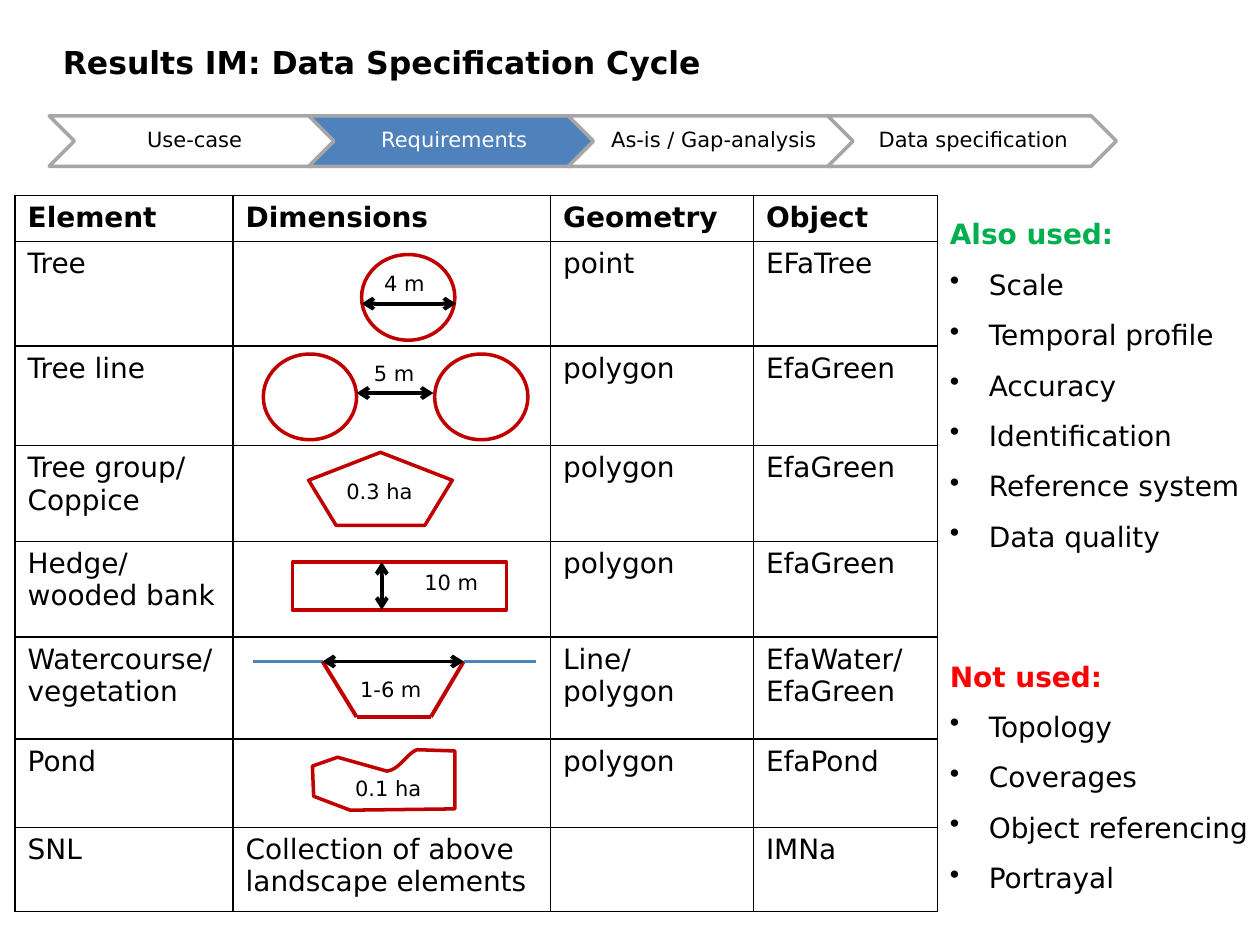
from itertools import accumulate
from lxml.etree import SubElement
from pptx import Presentation
from pptx.dml.color import RGBColor
from pptx.enum.shapes import MSO_CONNECTOR, MSO_SHAPE
from pptx.enum.text import MSO_ANCHOR, MSO_AUTO_SIZE, PP_ALIGN
from pptx.oxml.ns import qn
from pptx.util import Inches, Pt

COLS, ROWS = 100, 75
UNIT = Inches(0.1)
BLACK, WHITE, GREY = "000000", "FFFFFF", "A6A6A6"
RED, BLUE = "C00000", "4F81BD"

STEPS = ["Use-case", "Requirements", "As-is / Gap-analysis", "Data specification"]
WIDTHS = [17.3, 25.2, 16.1, 14.6]
HEIGHTS = [3.5, 8.3, 7.9, 7.6, 7.6, 8.1, 7, 6.7]
CELLS = [
    ["Element", "Dimensions", "Geometry", "Object"],
    ["Tree", "", "point", "EFaTree"],
    ["Tree line", "", "polygon", "EfaGreen"],
    ["Tree group/\nCoppice", "", "polygon", "EfaGreen"],
    ["Hedge/\nwooded bank", "", "polygon", "EfaGreen"],
    ["Watercourse/\nvegetation", "", "Line/\npolygon", "EfaWater/\nEfaGreen"],
    ["Pond", "", "polygon", "EfaPond"],
    ["SNL", "Collection of above landscape elements", "", "IMNa"],
]
USED = ["Scale", "Temporal profile", "Accuracy", "Identification",
        "Reference system", "Data quality"]
UNUSED = ["Topology", "Coverages", "Object referencing", "Portrayal"]


def grid(*vals):
    return [round(val * UNIT) for val in vals]


def tint(code):
    return RGBColor.from_string(code)


def style(par, size, color=BLACK, bold=False):
    font = par.font
    font.name, font.size, font.bold = "DejaVu Sans", Pt(size), bold
    font.color.rgb = tint(color)


def paint(shape, fill, line, width=2):
    shape.shadow.inherit = False
    shape.fill.solid()
    shape.fill.fore_color.rgb = tint(fill)
    shape.line.color.rgb = tint(line)
    shape.line.width = Pt(width)


def block(shapes, kind, box, fill=WHITE, line=RED):
    shape = shapes.add_shape(kind, *grid(*box))
    paint(shape, fill, line)


def label(shapes, box, text, size=12, bold=False, wrap=False):
    frame = shapes.add_textbox(*grid(*box)).text_frame
    frame.word_wrap = wrap
    frame.auto_size = MSO_AUTO_SIZE.SHAPE_TO_FIT_TEXT
    frame.text = text
    style(frame.paragraphs[0], size, bold=bold)


def stroke(shapes, start, end, color=BLACK, heads=False):
    line = shapes.add_connector(MSO_CONNECTOR.STRAIGHT, *grid(*start, *end))
    line.line.color.rgb = tint(color)
    line.line.width = Pt(2.25)
    if heads:
        for tag in ("a:headEnd", "a:tailEnd"):
            SubElement(line.line._get_or_add_ln(), qn(tag), type="arrow")
    SubElement(line._element.spPr, qn("a:effectLst"))


def chain(shapes, box):
    left, top, wide, high = box
    step = (wide - 22.9) / (len(STEPS) - 1)
    for num, text in enumerate(STEPS):
        live = text == "Requirements"
        x = left + num * step
        group = shapes.add_group_shape().shapes
        block(group, MSO_SHAPE.CHEVRON, (x, top, 22.9, high), BLUE if live else WHITE, GREY)
        frame = group.add_textbox(*grid(x + 2, top, 18.8, high)).text_frame
        frame.word_wrap = True
        frame.vertical_anchor = MSO_ANCHOR.MIDDLE
        frame.margin_left = Inches(0.05)
        frame.margin_top = frame.margin_right = frame.margin_bottom = Inches(0.02)
        frame.text = text
        par = frame.paragraphs[0]
        par.alignment, par.line_spacing = PP_ALIGN.CENTER, 0.9
        style(par, 12, WHITE if live else BLACK)


def edge(cell):
    props = cell._tc.get_or_add_tcPr()
    for num, side in enumerate(("lnL", "lnR", "lnT", "lnB")):
        line = props.makeelement(qn("a:" + side), {"w": str(Pt(1))})
        fill = SubElement(line, qn("a:solidFill"))
        SubElement(fill, qn("a:srgbClr"), val=BLACK)
        props.insert(num, line)


def table(shapes, box):
    grid_box = grid(*box)
    tab = shapes.add_table(len(HEIGHTS), len(WIDTHS), *grid_box).table
    tab.first_row = tab.horz_banding = False
    for col, wide in zip(tab.columns, grid(*WIDTHS)):
        col.width = wide
    for row, high, texts in zip(tab.rows, grid(*HEIGHTS), CELLS):
        row.height = high
        for cell, text in zip(row.cells, texts):
            cell.fill.solid()
            cell.fill.fore_color.rgb = tint(WHITE)
            edge(cell)
            cell.text = text
            for par in cell.text_frame.paragraphs:
                style(par, 16, bold=texts is CELLS[0])


def tree(shapes, x, y):
    block(shapes, MSO_SHAPE.OVAL, (x + 10.2, y + 1.2, 7.4, 6.8))
    stroke(shapes, (x + 10.2, y + 5.1), (x + 17.7, y + 5.1), heads=True)
    label(shapes, (x + 11, y + 2, 5.3, 3), "4 m")


def avenue(shapes, x, y):
    for shift in (2.4, 16):
        block(shapes, MSO_SHAPE.OVAL, (x + shift, y + 0.8, 7.4, 6.8))
    stroke(shapes, (x + 9.8, y + 3.9), (x + 15.9, y + 3.9), heads=True)
    label(shapes, (x + 10.2, y + 0.8, 5.3, 3), "5 m")


def coppice(shapes, x, y):
    block(shapes, MSO_SHAPE.REGULAR_PENTAGON, (x + 6, y + 0.7, 11.4, 5.8))
    label(shapes, (x + 8, y + 2.3, 7.5, 3), "0.3 ha")


def hedge(shapes, x, y):
    block(shapes, MSO_SHAPE.RECTANGLE, (x + 4.7, y + 1.8, 17, 3.8))
    stroke(shapes, (x + 11.8, y + 1.8), (x + 11.8, y + 5.6), heads=True)
    label(shapes, (x + 14.2, y + 1.9, 6.4, 3), "10 m")


def water(shapes, x, y):
    spots = [(1.6, 2.1), (7.1, 2.1), (9.8, 6.5), (15.7, 6.5), (18.3, 2.1), (24, 2.1)]
    spots = [(x + a, y + b) for a, b in spots]
    for start, end, color in zip(spots, spots[1:], [BLUE, RED, RED, RED, BLUE]):
        stroke(shapes, start, end, color)
    stroke(shapes, spots[1], spots[4], heads=True)
    label(shapes, (x + 9.1, y + 2.8, 7.2, 3), "1-6 m", wrap=True)


def curve(knots, count=12):
    for num in range(1, count + 1):
        t = num / count
        parts = ((1 - t) ** 3, 3 * t * (1 - t) ** 2, 3 * t * t * (1 - t), t ** 3)
        yield tuple(sum(p * k[axis] for p, k in zip(parts, knots)) for axis in (0, 1))


def pond(shapes, x, y):
    spots = [(8.3, 1.6), (6.3, 2.3), (6.4, 4.7), (9.3, 5.8), (17.6, 5.7), (17.6, 1.1), (14.6, 1)]
    spots += curve([spots[-1], (13.8, 1.3), (13.2, 2.6), (12.2, 2.7)])
    spots = [grid(x + a, y + b) for a, b in spots]
    form = shapes.build_freeform(*spots[0])
    form.add_line_segments(spots[1:], close=True)
    paint(form.convert_to_shape(), WHITE, RED)
    label(shapes, (x + 8.7, y + 2.6, 7.5, 3), "0.1 ha")


def notes(shapes, box, head, color, items):
    frame = shapes.add_textbox(*grid(*box)).text_frame
    frame.word_wrap = False
    frame.auto_size = MSO_AUTO_SIZE.SHAPE_TO_FIT_TEXT
    frame.text = "\n".join([head, *items])
    for num, par in enumerate(frame.paragraphs):
        par.line_spacing = 1.5
        if num:
            props = par._p.get_or_add_pPr()
            props.set("marL", str(Inches(0.31)))
            props.set("indent", str(-Inches(0.31)))
            SubElement(props, qn("a:buChar"), char="•")
        style(par, 16, BLACK if num else color, not num)


def main():
    deck = Presentation()
    deck.slide_width, deck.slide_height = grid(COLS, ROWS)
    shapes = deck.slides.add_slide(deck.slide_layouts[6]).shapes
    label(shapes, (4, 2.9, 86.6, 4), "Results IM: Data Specification Cycle", 18, True, True)
    chain(shapes, (3.9, 9.2, 84.7, 4))
    left, top = 1.2, 15.5
    table(shapes, (left, top, sum(WIDTHS), sum(HEIGHTS)))
    tops = accumulate(HEIGHTS, initial=top)
    next(tops)
    for draw, y in zip((tree, avenue, coppice, hedge, water, pond), tops):
        draw(shapes, left + WIDTHS[0], y)
    notes(shapes, (74.4, 15.4, 25.2, 29.3), "Also used:", "00B050", USED)
    notes(shapes, (74.4, 50.5, 26, 21.2), "Not used:", "FF0000", UNUSED)
    deck.save("out.pptx")


if __name__ == "__main__":
    main()
